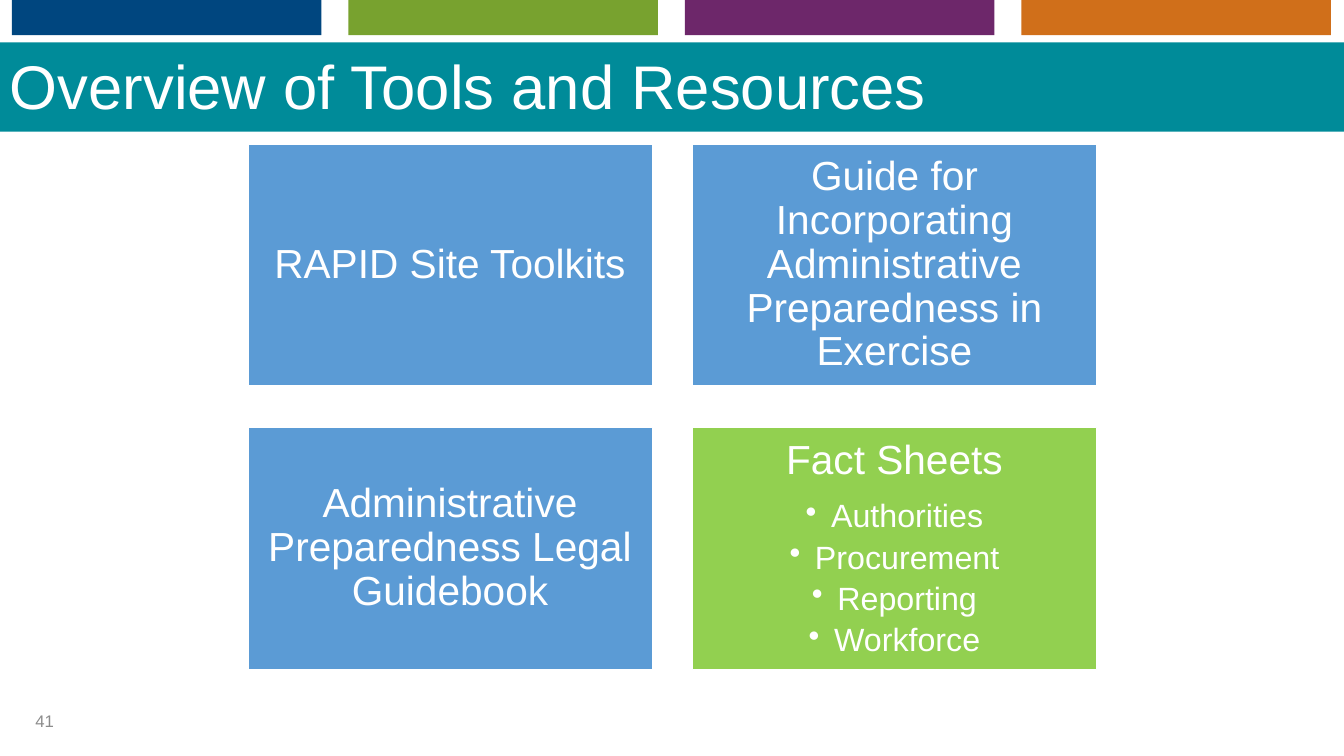
"""Build the overview slide of tools and resources."""
import lxml.etree
import pptx
import pptx.dml.color
import pptx.enum.shapes
import pptx.enum.text
import pptx.oxml.ns
import pptx.util
from pptx.util import Cm

ALIGN = pptx.enum.text.PP_ALIGN
ANCHOR = pptx.enum.text.MSO_ANCHOR
SLIDE_WIDTH = 33.87
BAR_COLORS = ["00467F", "78A22F", "6D276A", "D06F1A"]
CARDS = [
    ("RAPID Site Toolkits", [], "5B9BD5"),
    ("Guide for Incorporating Administrative Preparedness in Exercise", [], "5B9BD5"),
    ("Administrative Preparedness Legal Guidebook", [], "5B9BD5"),
    ("Fact Sheets", ["Authorities", "Procurement", "Reporting", "Workforce"], "92D050"),
]


def color(value):
    """Return the colour for a hex string."""
    return pptx.dml.color.RGBColor.from_string(value)


def add_rectangle(slide, left, top, width, height, fill, line=None):
    """Add a filled rectangle, outlined only when a line colour is given."""
    shape = slide.shapes.add_shape(
        pptx.enum.shapes.MSO_SHAPE.RECTANGLE, Cm(left), Cm(top), Cm(width), Cm(height))
    shape.shadow.inherit = False
    shape.fill.solid()
    shape.fill.fore_color.rgb = color(fill)
    if line:
        shape.line.color.rgb = color(line)
        shape.line.width = pptx.util.Pt(1)
    else:
        shape.line.fill.background()
    return shape


def set_font(paragraph, size, value):
    """Set the font of a whole paragraph."""
    paragraph.font.name = "Arial"
    paragraph.font.size = pptx.util.Pt(size)
    paragraph.font.color.rgb = color(value)


def add_text(slide, left, top, width, height, text, size, value, anchor):
    """Add a text box with one paragraph."""
    box = slide.shapes.add_textbox(Cm(left), Cm(top), Cm(width), Cm(height))
    frame = box.text_frame
    frame.word_wrap = True
    frame.vertical_anchor = anchor
    frame.text = text
    set_font(frame.paragraphs[0], size, value)


def add_bullet(paragraph):
    """Give a paragraph a round bullet with a hanging indent."""
    properties = paragraph._p.get_or_add_pPr()
    properties.set("marL", str(Cm(0.64)))
    properties.set("indent", str(Cm(-0.64)))
    bullet = lxml.etree.SubElement(properties, pptx.oxml.ns.qn("a:buChar"))
    bullet.set("char", "•")


def add_card(slide, left, top, heading, items, fill):
    """Add a card with a heading and optional bulleted items."""
    frame = add_rectangle(slide, left, top, 10.19, 6.1, fill, "FFFFFF").text_frame
    frame.word_wrap = True
    frame.vertical_anchor = ANCHOR.TOP if items else ANCHOR.MIDDLE
    frame.margin_left = frame.margin_right = Cm(0.3)
    frame.margin_top = frame.margin_bottom = Cm(0.3)
    frame.text = "\n".join([heading, *items])
    for index, paragraph in enumerate(frame.paragraphs):
        if index:
            paragraph.level = 1
            add_bullet(paragraph)
        paragraph.alignment = ALIGN.CENTER
        paragraph.line_spacing = 0.9
        if index < len(items):
            paragraph.space_after = pptx.util.Pt(4.7 if index else 12)
        set_font(paragraph, 23 if index else 29, "FFFFFF")


def main():
    """Build and save the slide."""
    presentation = pptx.Presentation()
    presentation.slide_width = Cm(SLIDE_WIDTH)
    presentation.slide_height = Cm(19.05)
    slide = presentation.slides.add_slide(presentation.slide_layouts[6])
    add_rectangle(slide, 0, 1.07, SLIDE_WIDTH, 2.25, "008B99")
    for index, fill in enumerate(BAR_COLORS):
        add_rectangle(slide, 0.3 + 8.48 * index, 0, 7.8, 0.89, fill)
    add_text(slide, 0, 1.09, SLIDE_WIDTH, 2.13,
             "Overview of Tools and Resources", 44, "FFFFFF", ANCHOR.TOP)
    for index, (heading, items, fill) in enumerate(CARDS):
        row, column = divmod(index, 2)
        add_card(slide, 6.25 + 11.2 * column, 3.63 + 7.14 * row, heading, items, fill)
    add_text(slide, 0.64, 17.65, 7.62, 1.02, "41", 12, "8C8C8C", ANCHOR.MIDDLE)
    presentation.save("out.pptx")


if __name__ == "__main__":
    main()
